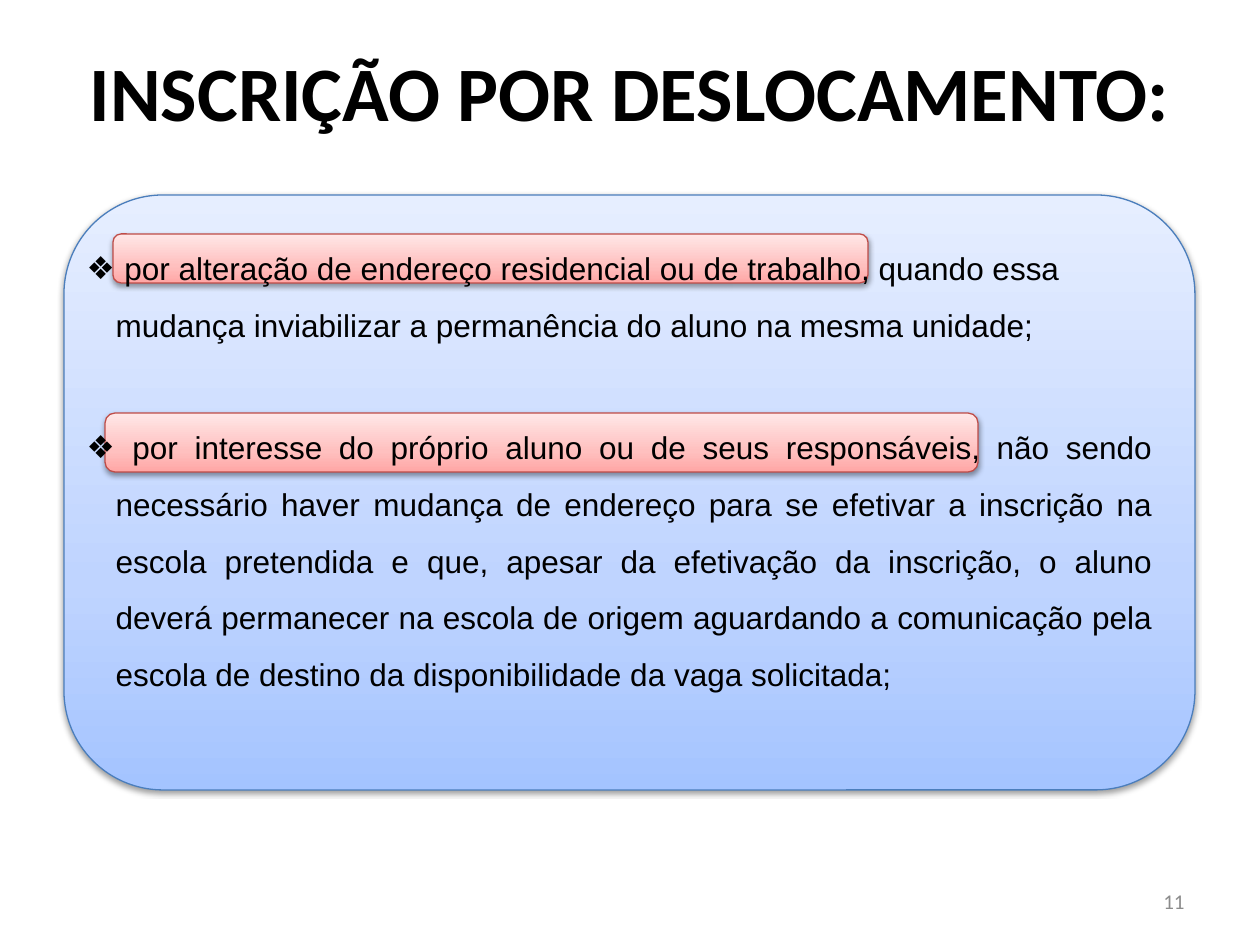
from copy import deepcopy

from lxml.etree import SubElement
from pptx import Presentation
from pptx.dml.color import RGBColor
from pptx.enum.shapes import MSO_SHAPE as Preset
from pptx.enum.text import MSO_ANCHOR as Anchor, MSO_AUTO_SIZE as AutoSize, PP_ALIGN as Align
from pptx.oxml.ns import qn
from pptx.util import Emu, Pt

PX = 914400 / 126
BLUE = {"line": "4B7EBC", "stops": ((0, "A4C4FF"), (0.35, "BFD4FF"), (1, "E6EEFF"))}
RED = {"line": "BF4C48", "stops": ((0, "FFA6A5"), (0.35, "FFC0BF"), (1, "FFE7E7"))}
PANELS = (
    ((64, 195, 1131, 595), BLUE),
    ((105, 413, 873, 59), RED),
    ((113, 234, 755, 49), RED),
)
TITLE = "INSCRIÇÃO POR DESLOCAMENTO:"
REASONS = (
    ((74, 224, 1101, 127), Align.LEFT,
     " por alteração de endereço residencial ou de trabalho, quando essa mudança "
     "inviabilizar a permanência do aluno na mesma unidade;"),
    ((74, 403, 1091, 299), Align.JUSTIFY,
     " por interesse do próprio aluno ou de seus responsáveis, não sendo necessário "
     "haver mudança de endereço para se efetivar a inscrição na escola pretendida e que, "
     "apesar da efetivação da inscrição, o aluno deverá permanecer na escola de origem "
     "aguardando a comunicação pela escola de destino da disponibilidade da vaga solicitada;"),
)


def px(length):
    """Turn pixels into EMU."""
    return Emu(round(length * PX))


def rgb(code):
    """Turn a hex string into a colour."""
    return RGBColor.from_string(code)


def add_panel(slide, box, palette):
    """Add a rounded panel with a vertical gradient and a soft shadow."""
    panel = slide.shapes.add_shape(Preset.ROUNDED_RECTANGLE, *map(px, box))
    panel.line.color.rgb = rgb(palette["line"])
    panel.line.width = Pt(0.75)
    panel.fill.gradient()
    panel.fill.gradient_angle = 90
    properties = panel.element.spPr
    stop_list = next(properties.iter(qn("a:gsLst")))
    stop_list.insert(1, deepcopy(stop_list[0]))
    for stop, (position, code) in zip(panel.fill.gradient_stops, palette["stops"]):
        stop.position = position
        stop.color.rgb = rgb(code)
    panel.shadow.inherit = False
    shadow = SubElement(properties.find(qn("a:effectLst")), qn("a:outerShdw"),
                        blurRad="40000", dist="20000", dir="5400000", rotWithShape="0")
    black = SubElement(shadow, qn("a:srgbClr"), val="000000")
    SubElement(black, qn("a:alpha"), val="38000")


def set_text(holder, box, text, anchor, formats, font):
    """Place a text holder in front and fill it with one formatted paragraph."""
    holder.left, holder.top, holder.width, holder.height = map(px, box)
    holder.element.getparent().append(holder.element)
    frame = holder.text_frame
    frame.text = text
    frame.word_wrap = True
    frame.auto_size = AutoSize.NONE
    frame.vertical_anchor = anchor
    paragraph = frame.paragraphs[0]
    for name, value in formats.items():
        setattr(paragraph, name, value)
    font = dict(font)
    run_font = paragraph.runs[0].font
    run_font.color.rgb = rgb(font.pop("color"))
    for name, value in font.items():
        setattr(run_font, name, value)
    return paragraph


def add_bullet(paragraph, mark, indent):
    """Give a paragraph a hanging bullet."""
    properties = paragraph._p.get_or_add_pPr()
    properties.set("marL", str(px(indent)))
    properties.set("indent", str(-px(indent)))
    SubElement(properties, qn("a:buFont"), typeface="Arial")
    SubElement(properties, qn("a:buChar"), char=mark)


def main():
    """Build the slide and save it."""
    deck = Presentation()
    deck.slide_width, deck.slide_height = px(1260), px(945)
    slide = deck.slides.add_slide(deck.slide_layouts.get_by_name("Two Content"))
    title, *bodies = list(slide.placeholders)[:3]

    for box, palette in PANELS:
        add_panel(slide, box, palette)
    for body, (box, align, reason) in zip(bodies, REASONS):
        paragraph = set_text(
            body, box, reason, Anchor.TOP,
            {"alignment": align, "line_spacing": 1.5, "space_before": Pt(0)},
            {"name": "Arial", "size": Pt(18), "color": "000000"})
        add_bullet(paragraph, "❖", 29)
    set_text(title, (63, 38, 1134, 158), TITLE, Anchor.TOP, {"alignment": Align.CENTER},
             {"name": "Calibri", "size": Pt(44), "bold": True, "color": "000000"})
    number_box = (903, 876, 294, 50)
    page_number = slide.shapes.add_textbox(*map(px, number_box))
    set_text(page_number, number_box, "11", Anchor.MIDDLE, {"alignment": Align.RIGHT},
             {"name": "Calibri", "size": Pt(12), "color": "8C8C8C"})
    deck.save("out.pptx")


if __name__ == "__main__":
    main()
